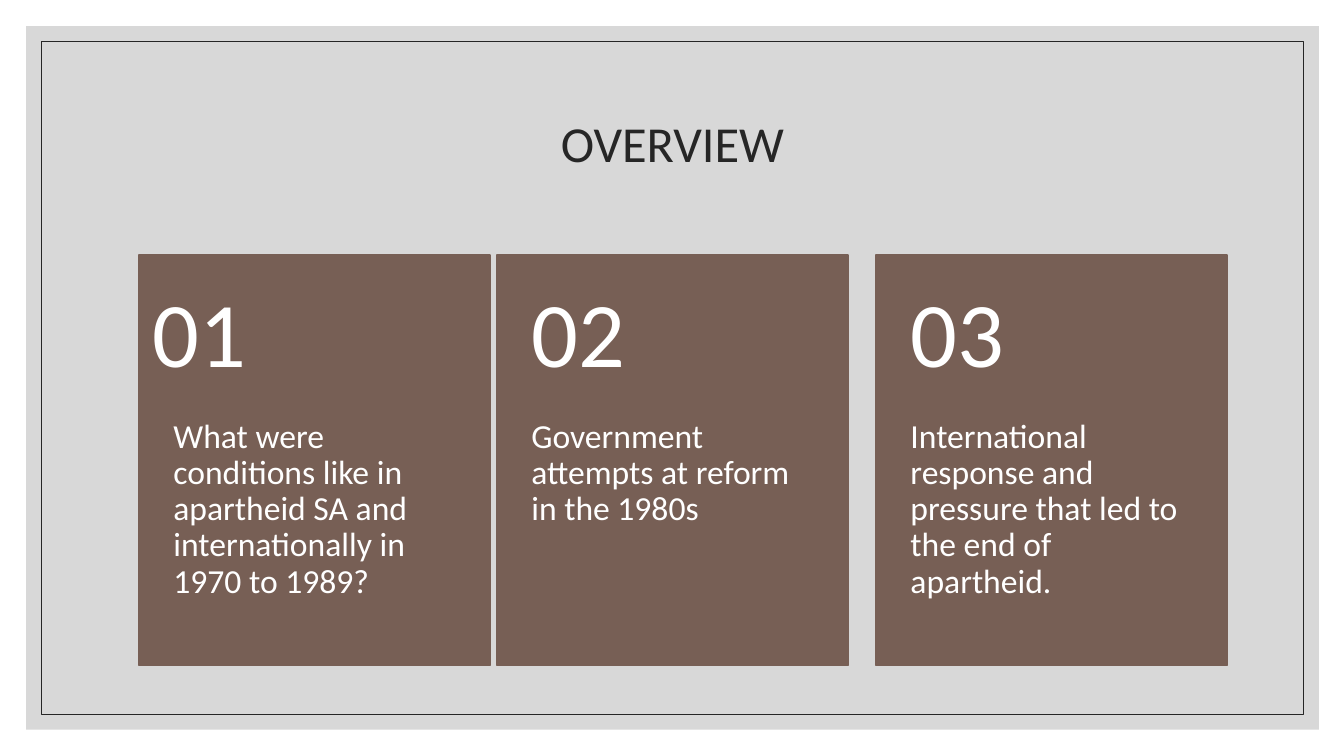
from lxml import etree
from pptx import Presentation
from pptx.dml.color import RGBColor
from pptx.enum import shapes, text
from pptx.oxml import ns
from pptx.util import Inches, Pt

COLORS = {"panel": "BFBFBF", "ink": "262626", "card": "775F55", "white": "FFFFFF"}
FONT = "Calibri"

# Number, question, left edge of the card, shift of the number
CARDS = [
    ("01", "What were conditions like in apartheid SA and internationally in 1970 to 1989?", 1.38, -0.21),
    ("02", "Government attempts at reform in the 1980s", 4.93, 0),
    ("03", "International response and pressure that led to the end of apartheid.", 8.69, 0),
]
CARD_TOP, CARD_WIDTH, CARD_HEIGHT = 2.53, 3.48, 4.07
NUMBER_SHARE = 0.4


def color(name):
    return RGBColor.from_string(COLORS[name])


def add_rectangle(page, left, top, width, height, fill=None, line=None, weight=1, alpha=None):
    box = page.shapes.add_shape(shapes.MSO_SHAPE.RECTANGLE, Inches(left), Inches(top),
                                Inches(width), Inches(height))
    box.shadow.inherit = False
    if fill:
        box.fill.solid()
        box.fill.fore_color.rgb = color(fill)
    else:
        box.fill.background()
    if line:
        box.line.color.rgb = color(line)
        box.line.width = Pt(weight)
    else:
        box.line.fill.background()
    if alpha is not None:
        tint = box.fill._xPr.find(".//" + ns.qn("a:srgbClr"))
        etree.SubElement(tint, ns.qn("a:alpha")).set("val", str(alpha * 1000))
    return box


def add_text(page, words, left, top, width, height, size=24, ink="white",
             align=text.PP_ALIGN.LEFT, anchor=text.MSO_ANCHOR.TOP,
             insets=(0.1, 0.05, 0.1, 0.05)):
    box = page.shapes.add_textbox(Inches(left), Inches(top), Inches(width), Inches(height))
    frame = box.text_frame
    frame.word_wrap = True
    frame.vertical_anchor = anchor
    frame.margin_left, frame.margin_top, frame.margin_right, frame.margin_bottom = map(Inches, insets)
    para = frame.paragraphs[0]
    para.alignment = align
    para.line_spacing = 0.9
    span = para.add_run()
    span.text = words
    span.font.name = FONT
    span.font.size = Pt(size)
    span.font.color.rgb = color(ink)


def add_backdrop(page, left, top, width, height):
    # Translucent panel with a thin frame inside it
    margin = 0.15
    add_rectangle(page, left, top, width, height, fill="panel", alpha=60)
    add_rectangle(page, left + margin, top + margin, width - 2 * margin, height - 2 * margin,
                  line="ink", weight=0.5)


def add_title(page, left, top, width, height):
    add_text(page, "OVERVIEW", left, top, width, height, size=36, ink="ink",
             align=text.PP_ALIGN.CENTER, anchor=text.MSO_ANCHOR.MIDDLE)


def add_card(page, number, question, left, top, width, height, number_shift):
    number_height = height * NUMBER_SHARE
    add_rectangle(page, left, top, width, height, fill="card", line="card")
    add_text(page, question, left, top + number_height, width, height - number_height,
             insets=(0.34, 0, 0.34, 0.36))
    add_text(page, number, left + number_shift, top, width, number_height, size=66,
             anchor=text.MSO_ANCHOR.MIDDLE, insets=(0.34, 0.18, 0.34, 0.18))


def main():
    deck = Presentation()
    deck.slide_width, deck.slide_height = Inches(13.33), Inches(7.5)
    page = deck.slides.add_slide(deck.slide_layouts[6])
    add_backdrop(page, 0.26, 0.26, 12.82, 6.98)
    add_title(page, 1.17, 0.7, 11, 1.5)
    for number, question, left, shift in CARDS:
        add_card(page, number, question, left, CARD_TOP, CARD_WIDTH, CARD_HEIGHT, shift)
    deck.save("out.pptx")


if __name__ == "__main__":
    main()
